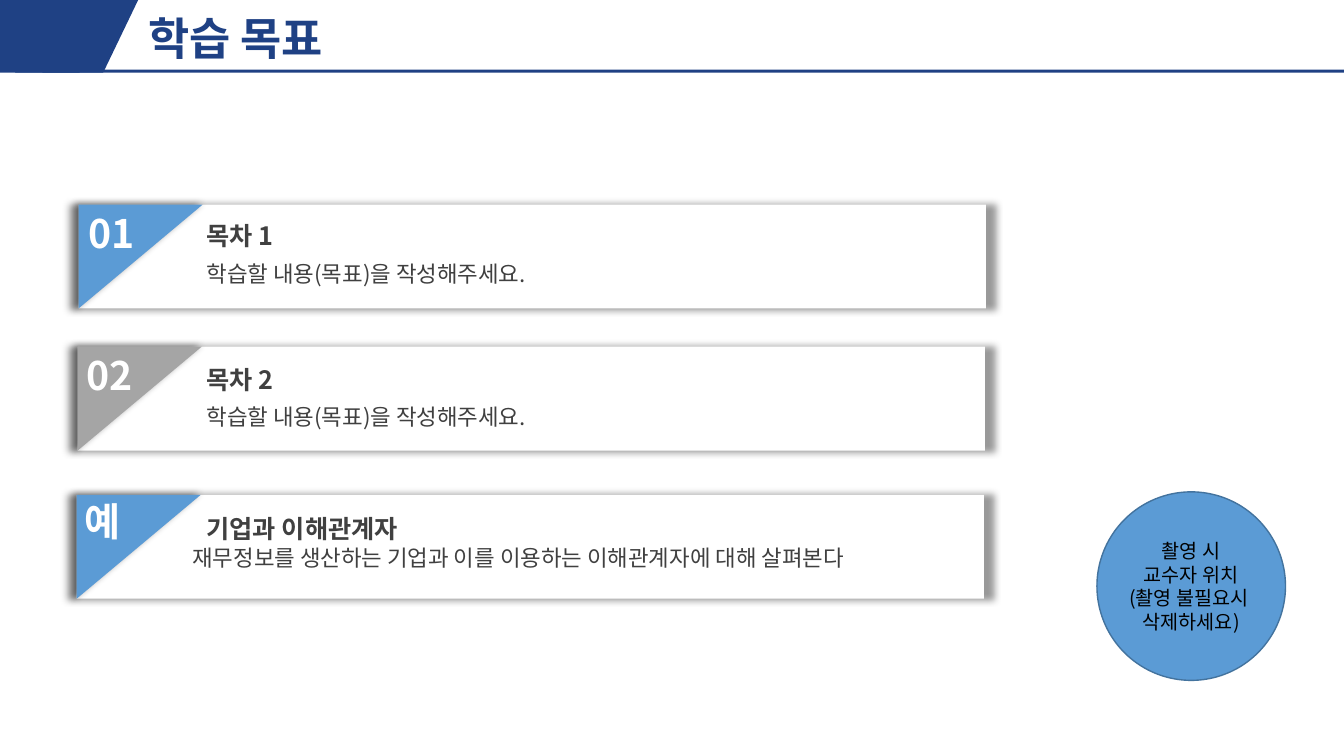
"""Build the learning goals slide."""
from dataclasses import dataclass

from lxml import etree
from pptx import Presentation
from pptx.dml.color import RGBColor
from pptx.enum.shapes import MSO_SHAPE
from pptx.enum.text import MSO_ANCHOR, PP_ALIGN
from pptx.oxml.ns import qn
from pptx.shapes.autoshape import Shape
from pptx.slide import Slide
from pptx.util import Inches, Pt

RECT = MSO_SHAPE.RECTANGLE
SLANT = MSO_SHAPE.PARALLELOGRAM
WEDGE = MSO_SHAPE.RIGHT_TRIANGLE
OVAL = MSO_SHAPE.OVAL
MIDDLE = MSO_ANCHOR.MIDDLE
CENTER = PP_ALIGN.CENTER

FONT = "Noto Sans CJK KR"
NAVY = RGBColor(0x1F, 0x41, 0x84)
BLUE = RGBColor(0x5B, 0x9B, 0xD5)
EDGE = RGBColor(0x43, 0x73, 0x9E)
GRAY = RGBColor(0xA5, 0xA5, 0xA5)
DARK = RGBColor(0x40, 0x40, 0x40)
BLACK = RGBColor(0, 0, 0)
WHITE = RGBColor(0xFF, 0xFF, 0xFF)

CARD_W, CARD_H, WEDGE_W = 9, 1.03, 1.23


@dataclass
class Box:
    """A frame in inches."""
    left: float
    top: float
    width: float
    height: float


@dataclass
class Card:
    """A numbered goal with its heading and body."""
    left: float
    top: float
    color: RGBColor
    mark: str
    mark_box: Box
    head: str
    head_box: Box
    body: str
    body_box: Box


GOAL = "학습할 내용(목표)을 작성해주세요."
CARDS = [
    Card(0.78, 2.03, BLUE, "01", Box(0.78, 2.03, 1.06, 0.57),
         "목차 1", Box(1.95, 2.14, 7.55, 0.4),
         GOAL, Box(1.95, 2.53, 7.55, 0.37)),
    Card(0.77, 3.44, GRAY, "02", Box(0.76, 3.44, 1.06, 0.57),
         "목차 2", Box(1.95, 3.57, 7.55, 0.4),
         GOAL, Box(1.95, 3.95, 7.55, 0.37)),
    Card(0.76, 4.91, BLUE, "예", Box(0.74, 4.88, 1.06, 0.57),
         "기업과 이해관계자", Box(1.95, 5.04, 7.55, 0.4),
         "재무정보를 생산하는 기업과 이를 이용하는 이해관계자에 대해 살펴본다",
         Box(1.81, 5.35, 7.55, 0.64)),
]


def frame(box: Box) -> tuple:
    """Return the frame as lengths."""
    return (Inches(box.left), Inches(box.top),
            Inches(box.width), Inches(box.height))


def add_form(slide: Slide, kind: MSO_SHAPE, box: Box, color: RGBColor) -> Shape:
    """Add a plain filled shape."""
    form = slide.shapes.add_shape(kind, *frame(box))
    form.shadow.inherit = False
    form.fill.solid()
    form.fill.fore_color.rgb = color
    form.line.fill.background()
    return form


def add_glow(form: Shape) -> None:
    """Give a shape a soft centred shadow."""
    effects = form._element.spPr.find(qn("a:effectLst"))
    shade = etree.SubElement(
        effects, qn("a:outerShdw"), blurRad=str(Pt(5)), sx="102000",
        sy="102000", algn="ctr", rotWithShape="0")
    color = etree.SubElement(shade, qn("a:srgbClr"), val=str(BLACK))
    etree.SubElement(color, qn("a:alpha"), val="40000")


def set_text(form: Shape, text: str, size: int, color: RGBColor,
             bold: bool = False) -> None:
    """Write text and format every run."""
    form.text_frame.text = text
    for para in form.text_frame.paragraphs:
        for run in para.runs:
            font = run.font
            font.size, font.bold, font.name = Pt(size), bold, FONT
            font.color.rgb = color
            etree.SubElement(run._r.get_or_add_rPr(), qn("a:ea"), typeface=FONT)


def add_text(slide: Slide, box: Box, text: str, size: int, color: RGBColor,
             bold: bool = False) -> Shape:
    """Add a wrapping text box."""
    label = slide.shapes.add_textbox(*frame(box))
    label.text_frame.word_wrap = True
    set_text(label, text, size, color, bold)
    return label


def add_header(slide: Slide) -> None:
    """Draw the title and its band."""
    slant = add_form(slide, SLANT, Box(0.15, 0, 1.22, 0.72), NAVY)
    slant.adjustments[0] = 0.481
    add_form(slide, RECT, Box(0, 0, 0.79, 0.72), NAVY)
    add_form(slide, RECT, Box(0.42, 0.69, 12.91, 0.03), NAVY)
    title = add_text(slide, Box(1.37, 0.08, 11.5, 0.65), "학습 목표", 32, NAVY, True)
    title.text_frame.vertical_anchor = MIDDLE
    title.text_frame.paragraphs[0].line_spacing = 0.9


def add_spot(slide: Slide) -> None:
    """Draw the round note on where the teacher stands."""
    spot = add_form(slide, OVAL, Box(10.88, 4.88, 1.87, 1.87), BLUE)
    spot.line.color.rgb = EDGE
    spot.line.width = Pt(1)
    set_text(spot, "촬영 시\n교수자 위치\n(촬영 불필요시 \n삭제하세요)", 14, BLACK)
    spot.text_frame.word_wrap = False
    spot.text_frame.vertical_anchor = MIDDLE
    for para in spot.text_frame.paragraphs:
        para.alignment = CENTER


def add_card(slide: Slide, card: Card) -> None:
    """Draw one goal card."""
    add_glow(add_form(slide, RECT, Box(card.left, card.top, CARD_W, CARD_H), WHITE))
    shift = (WEDGE_W - CARD_H) / 2
    wedge = add_form(slide, WEDGE, Box(card.left + shift, card.top - shift,
                                       CARD_H, WEDGE_W), card.color)
    wedge.rotation = 90
    add_glow(wedge)
    add_text(slide, card.mark_box, card.mark, 28, WHITE, True)
    add_text(slide, card.head_box, card.head, 18, DARK, True)
    add_text(slide, card.body_box, card.body, 16, DARK)


def main() -> None:
    """Build and save the deck."""
    deck = Presentation()
    deck.slide_width, deck.slide_height = Inches(13.33), Inches(7.5)
    slide = deck.slides.add_slide(deck.slide_layouts[6])
    add_header(slide)
    add_spot(slide)
    for card in CARDS:
        add_card(slide, card)
    deck.save("out.pptx")


if __name__ == "__main__":
    main()
